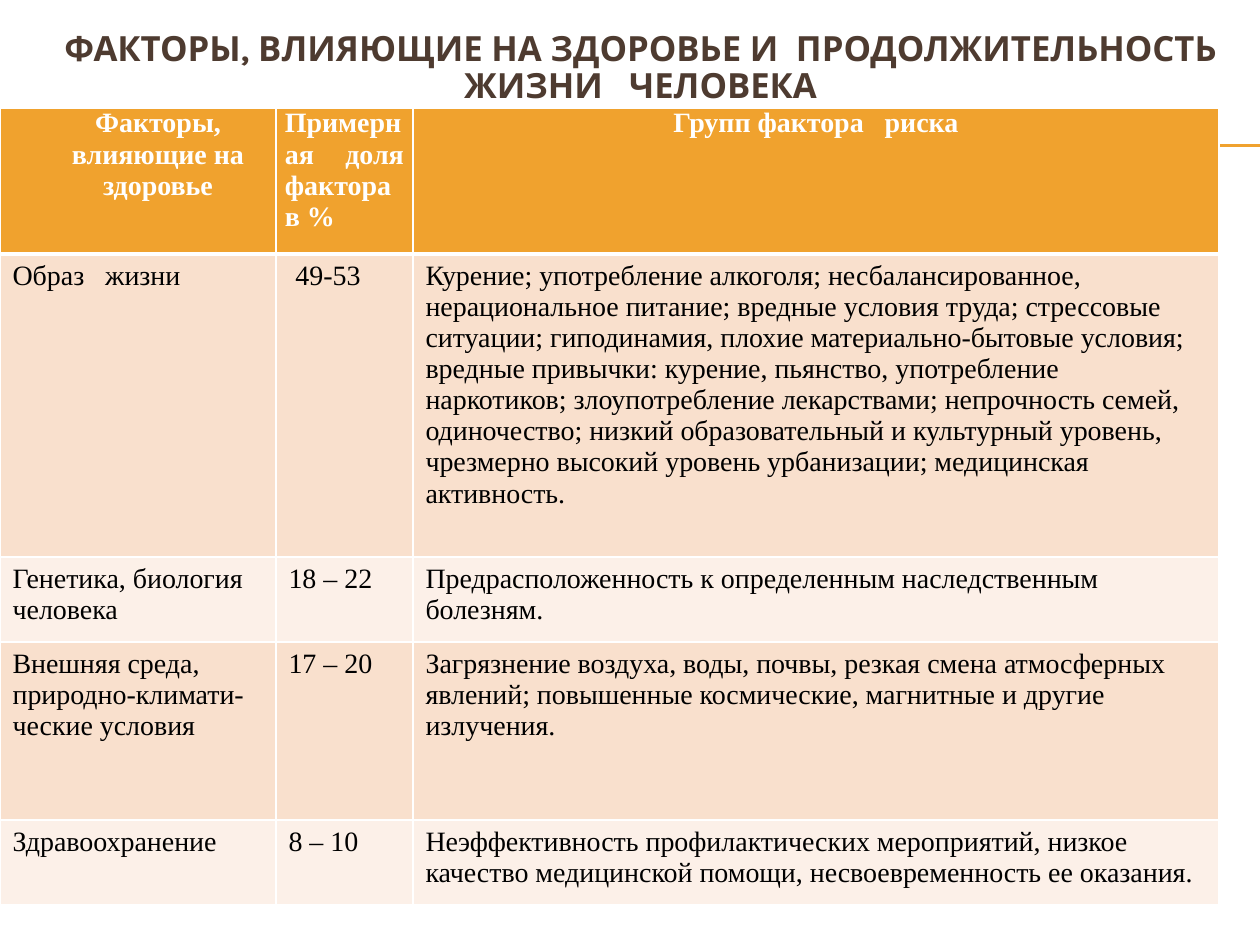
from dataclasses import dataclass

import pptx
import pptx.dml.color
import pptx.enum.shapes
import pptx.enum.text
import pptx.oxml.ns
import pptx.util
from lxml import etree

ALIGN = pptx.enum.text.PP_ALIGN


@dataclass(frozen=True)
class Theme:
    accent: str = "F0A22E"
    title: str = "4E3B30"
    white: str = "FFFFFF"
    body: str = "000000"
    bands: tuple = ("F9E0CD", "FCF0E8")
    title_font: str = "Karla"
    table_font: str = "Times New Roman"
    title_size: float = 19.8
    table_size: float = 16
    border: int = 1
    header_border: int = 3
    rule: float = 0.75


THEME = Theme()
COLUMN_WIDTHS = (276, 137, 806)
ROW_HEIGHTS = (146, 303, 85, 178, 85)
HEADER_ALIGNMENTS = (ALIGN.CENTER, ALIGN.JUSTIFY, ALIGN.CENTER)
HEADER_INDENT = 40
HEADER_MARGIN = 9

TITLE = "ФАКТОРЫ, ВЛИЯЮЩИЕ НА ЗДОРОВЬЕ И  ПРОДОЛЖИТЕЛЬНОСТЬ ЖИЗНИ   ЧЕЛОВЕКА"
HEADER = ("Факторы, влияющие на здоровье", "Примерная доля фактора в %",
          "Групп фактора   риска")
FACTORS = (
    ("Образ   жизни", " 49-53",
     "Курение; употребление алкоголя; несбалансированное, нерациональное "
     "питание; вредные условия труда; стрессовые ситуации; гиподинамия, плохие "
     "материально-бытовые условия;  вредные привычки: курение, пьянство, "
     "употребление наркотиков; злоупотребление лекарствами; непрочность семей, "
     "одиночество; низкий образовательный и культурный уровень, чрезмерно "
     "высокий уровень урбанизации; медицинская активность."),
    ("Генетика, биология\nчеловека", "18 – 22",
     "Предрасположенность к определенным наследственным болезням."),
    ("Внешняя среда, природно-климати-ческие условия", "17 – 20",
     "Загрязнение воздуха, воды, почвы, резкая смена атмосферных явлений; "
     "повышенные космические, магнитные и другие излучения."),
    ("Здравоохранение", "8 – 10",
     "Неэффективность профилактических мероприятий, низкое качество "
     "медицинской помощи, несвоевременность ее оказания."),
)


def px(length):
    """Turn slide pixels (126 to the inch) into EMU."""
    return pptx.util.Emu(round(length * 914400 / 126))


def rgb(color):
    return pptx.dml.color.RGBColor.from_string(color)


def set_font(paragraph, name, size, color, bold):
    font = paragraph.font
    font.name, font.size, font.bold = name, pptx.util.Pt(size), bold
    font.color.rgb = rgb(color)


def add_rule(slide, y):
    line = slide.shapes.add_connector(
        pptx.enum.shapes.MSO_CONNECTOR.STRAIGHT, px(71), px(y), px(1260), px(y))
    line.line.color.rgb = rgb(THEME.accent)
    line.line.width = pptx.util.Pt(THEME.rule)
    etree.SubElement(line._element.spPr, pptx.oxml.ns.qn("a:effectLst"))


def fill_title(slide):
    title = slide.shapes.title
    title.left, title.top, title.width, title.height = map(px, (42, 29, 1197, 79))
    frame = title.text_frame
    frame.text = TITLE
    frame.word_wrap = True
    frame.auto_size = pptx.enum.text.MSO_AUTO_SIZE.NONE
    frame.vertical_anchor = pptx.enum.text.MSO_ANCHOR.MIDDLE
    paragraph = frame.paragraphs[0]
    paragraph.alignment = ALIGN.CENTER
    paragraph.line_spacing = 0.9
    set_font(paragraph, THEME.title_font, THEME.title_size, THEME.title, True)


def set_borders(cell, top, bottom):
    """Draw white cell borders; widths in points."""
    qn = pptx.oxml.ns.qn
    properties = cell._tc.get_or_add_tcPr()
    widths = {"lnL": THEME.border, "lnR": THEME.border, "lnT": top, "lnB": bottom}
    for side, width in widths.items():
        line = etree.SubElement(properties, qn("a:" + side),
                                w=str(pptx.util.Pt(width)))
        fill = etree.SubElement(line, qn("a:solidFill"))
        etree.SubElement(fill, qn("a:srgbClr"), val=THEME.white)


def fill_cell(cell, text, fill, color, bold, top, bottom):
    set_borders(cell, top, bottom)
    cell.fill.solid()
    cell.fill.fore_color.rgb = rgb(fill)
    cell.text = text
    for paragraph in cell.text_frame.paragraphs:
        set_font(paragraph, THEME.table_font, THEME.table_size, color, bold)


def fill_header(table):
    for column, (text, alignment) in enumerate(zip(HEADER, HEADER_ALIGNMENTS)):
        cell = table.cell(0, column)
        fill_cell(cell, text, THEME.accent, THEME.white, True,
                  THEME.border, THEME.header_border)
        cell.margin_left = cell.margin_right = px(HEADER_MARGIN)
        cell.margin_top = cell.margin_bottom = 0
        cell.text_frame.paragraphs[0].alignment = alignment
    first = table.cell(0, 0).text_frame.paragraphs[0]
    first._p.get_or_add_pPr().set("marL", str(px(HEADER_INDENT)))


def add_factor_table(slide):
    table = slide.shapes.add_table(
        len(ROW_HEIGHTS), len(COLUMN_WIDTHS), 0, px(108),
        px(sum(COLUMN_WIDTHS)), px(sum(ROW_HEIGHTS))).table
    for column, width in zip(table.columns, COLUMN_WIDTHS):
        column.width = px(width)
    for row, height in zip(table.rows, ROW_HEIGHTS):
        row.height = px(height)
    fill_header(table)
    for row, texts in enumerate(FACTORS, start=1):
        top = THEME.header_border if row == 1 else THEME.border
        band = THEME.bands[(row - 1) % 2]
        for column, text in enumerate(texts):
            fill_cell(table.cell(row, column), text, band, THEME.body, False,
                      top, THEME.border)


def main():
    presentation = pptx.Presentation()
    presentation.slide_width, presentation.slide_height = px(1260), px(945)
    slide = presentation.slides.add_slide(presentation.slide_layouts[5])
    for y in (145, 146):
        add_rule(slide, y)
    fill_title(slide)
    add_factor_table(slide)
    presentation.save("out.pptx")


if __name__ == "__main__":
    main()
